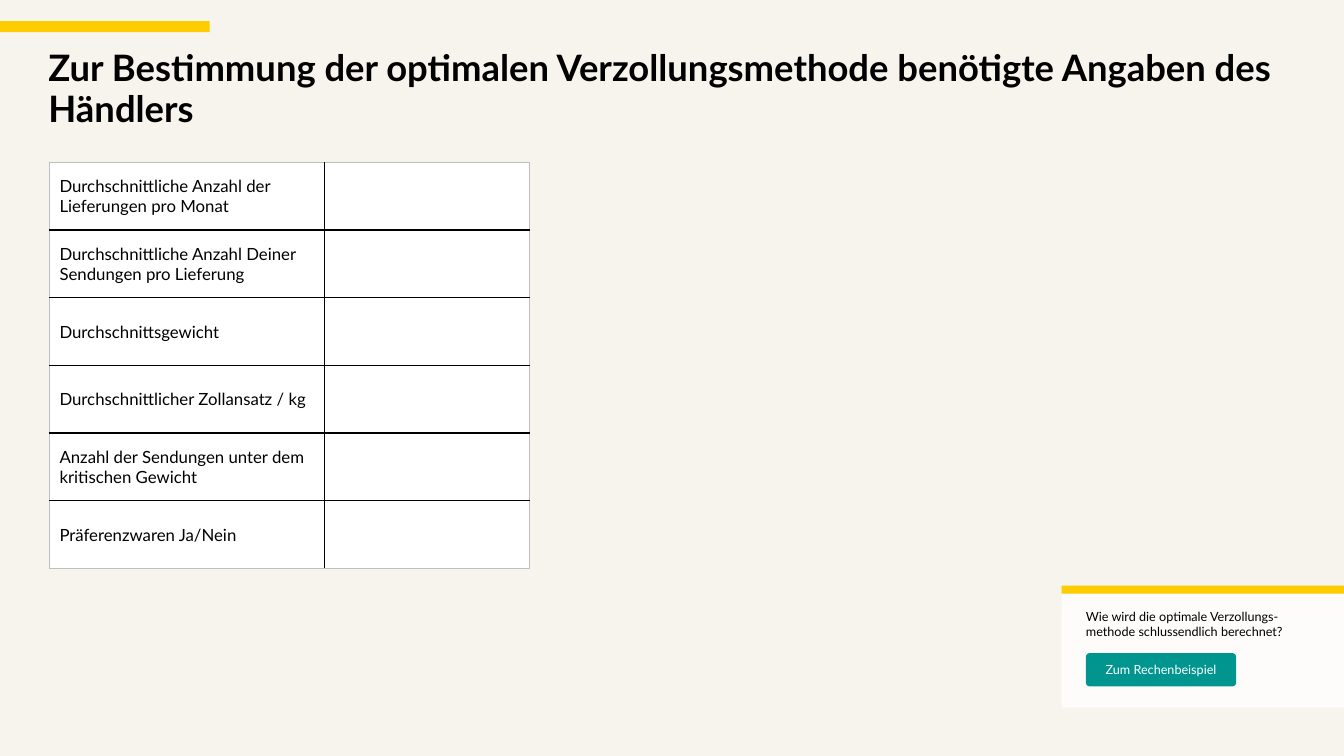
from lxml import etree
from pptx import Presentation
from pptx.dml.color import RGBColor
from pptx.enum.shapes import MSO_SHAPE
from pptx.enum.text import MSO_ANCHOR, MSO_AUTO_SIZE, PP_ALIGN
from pptx.oxml.ns import qn
from pptx.util import Inches, Pt

RECT, ROUND = MSO_SHAPE.RECTANGLE, MSO_SHAPE.ROUNDED_RECTANGLE
TOP, MIDDLE = MSO_ANCHOR.TOP, MSO_ANCHOR.MIDDLE
LEFT, CENTER = PP_ALIGN.LEFT, PP_ALIGN.CENTER

TITLE = "Zur Bestimmung der optimalen Verzollungsmethode benötigte Angaben des Händlers"
ROWS = [
    "Durchschnittliche Anzahl der Lieferungen pro Monat",
    "Durchschnittliche Anzahl Deiner Sendungen pro Lieferung",
    "Durchschnittsgewicht",
    "Durchschnittlicher Zollansatz / kg",
    "Anzahl der Sendungen unter dem kritischen Gewicht",
    "Präferenzwaren Ja/Nein",
]
HINT = "Wie wird die optimale Verzollungs-methode schlussendlich berechnet?"
BUTTON = "Zum Rechenbeispiel"

WIDTH, HEIGHT = 13.33, 7.5
COLS, ROW = (2.73, 2.03), 0.672
GRID_X, GRID_Y = 0.49, 1.61
CARD_X, CARD_Y, CARD_W, CARD_H = 10.53, 5.81, 2.8, 1.21
BAR, PAD = 0.08, 0.24
BLACK, WHITE, YELLOW, TEAL = "000000", "FFFFFF", "FFCC00", "00968F"
PAPER, GRAY = "F7F4ED", "BFBFBF"


def rgb(code):
    return RGBColor.from_string(code)


def paint(fill, code):
    fill.solid()
    fill.fore_color.rgb = rgb(code)


def write(frame, text, size, color=BLACK, bold=False, align=LEFT):
    para = frame.paragraphs[0]
    para.alignment = align
    run = para.add_run()
    run.text = text
    for key, value in {"name": "Lato", "size": Pt(size), "bold": bold}.items():
        setattr(run.font, key, value)
    run.font.color.rgb = rgb(color)
    return para


def fit(frame, anchor, inset=0):
    frame.word_wrap = True
    frame.auto_size = MSO_AUTO_SIZE.NONE
    frame.vertical_anchor = anchor
    for side in ("left", "right", "top", "bottom"):
        setattr(frame, f"margin_{side}", Inches(inset))


def box(slide, kind, area, color=None, curve=None):
    shape = slide.shapes.add_shape(kind, *map(Inches, area))
    shape.shadow.inherit = False
    shape.line.fill.background()
    if color:
        paint(shape.fill, color)
    else:
        shape.fill.background()
    if curve is not None:
        shape.adjustments[0] = curve
    return shape


def edge(cell, side, color):
    """Draw one border of a cell; side is L, R, T or B."""
    line = etree.SubElement(cell._tc.get_or_add_tcPr(), qn(f"a:ln{side}"), w=str(Pt(1)))
    fill = etree.SubElement(line, qn("a:solidFill"))
    etree.SubElement(fill, qn("a:srgbClr"), val=color)


def add_grid(slide):
    count, wide = len(ROWS), len(COLS)
    area = (GRID_X, GRID_Y, sum(COLS), ROW * count)
    table = slide.shapes.add_table(count, wide, *map(Inches, area)).table
    table.first_row = table.horz_banding = False
    for col, width in zip(table.columns, COLS):
        col.width = Inches(width)
    for r, label in enumerate(ROWS):
        table.rows[r].height = Inches(ROW)
        for c in range(wide):
            cell = table.cell(r, c)
            outer = {"L": c == 0, "R": c == wide - 1, "T": r == 0, "B": r == count - 1}
            for side, rim in outer.items():
                edge(cell, side, GRAY if rim else BLACK)
            paint(cell.fill, WHITE)
            cell.vertical_anchor = MIDDLE
            cell.margin_left = cell.margin_right = Inches(0.1)
            cell.margin_top = cell.margin_bottom = 0
        write(table.cell(r, 0).text_frame, label, 12)


def add_card(slide):
    panel = box(slide, RECT, (CARD_X, CARD_Y + BAR, CARD_W, CARD_H - BAR), WHITE)
    color = panel.fill._xPr.find(".//" + qn("a:srgbClr"))
    etree.SubElement(color, qn("a:alpha"), val="80000")
    box(slide, RECT, (CARD_X, CARD_Y, CARD_W, BAR), YELLOW)

    left = CARD_X + PAD
    hint = box(slide, ROUND, (left, 6.04, 2.35, 0.51), curve=0).text_frame
    fit(hint, TOP)
    write(hint, HINT, 9)
    button = box(slide, ROUND, (left, 6.48, 1.49, 0.33), TEAL, 0.11).text_frame
    fit(button, MIDDLE, 0.08)
    write(button, BUTTON, 9, WHITE, align=CENTER)


def main():
    deck = Presentation()
    deck.slide_width, deck.slide_height = Inches(WIDTH), Inches(HEIGHT)
    slide = deck.slides.add_slide(deck.slide_layouts[5])
    paint(slide.background.fill, PAPER)
    box(slide, RECT, (0, 0.21, 2.08, 0.11), YELLOW)

    title = slide.shapes.title
    place = dict(left=0.48, top=0.48, width=12.4, height=0.81)
    for key, value in place.items():
        setattr(title, key, Inches(value))
    fit(title.text_frame, TOP)
    write(title.text_frame, TITLE, 26, bold=True).line_spacing = Pt(29)

    add_grid(slide)
    add_card(slide)
    deck.save("out.pptx")


if __name__ == "__main__":
    main()
